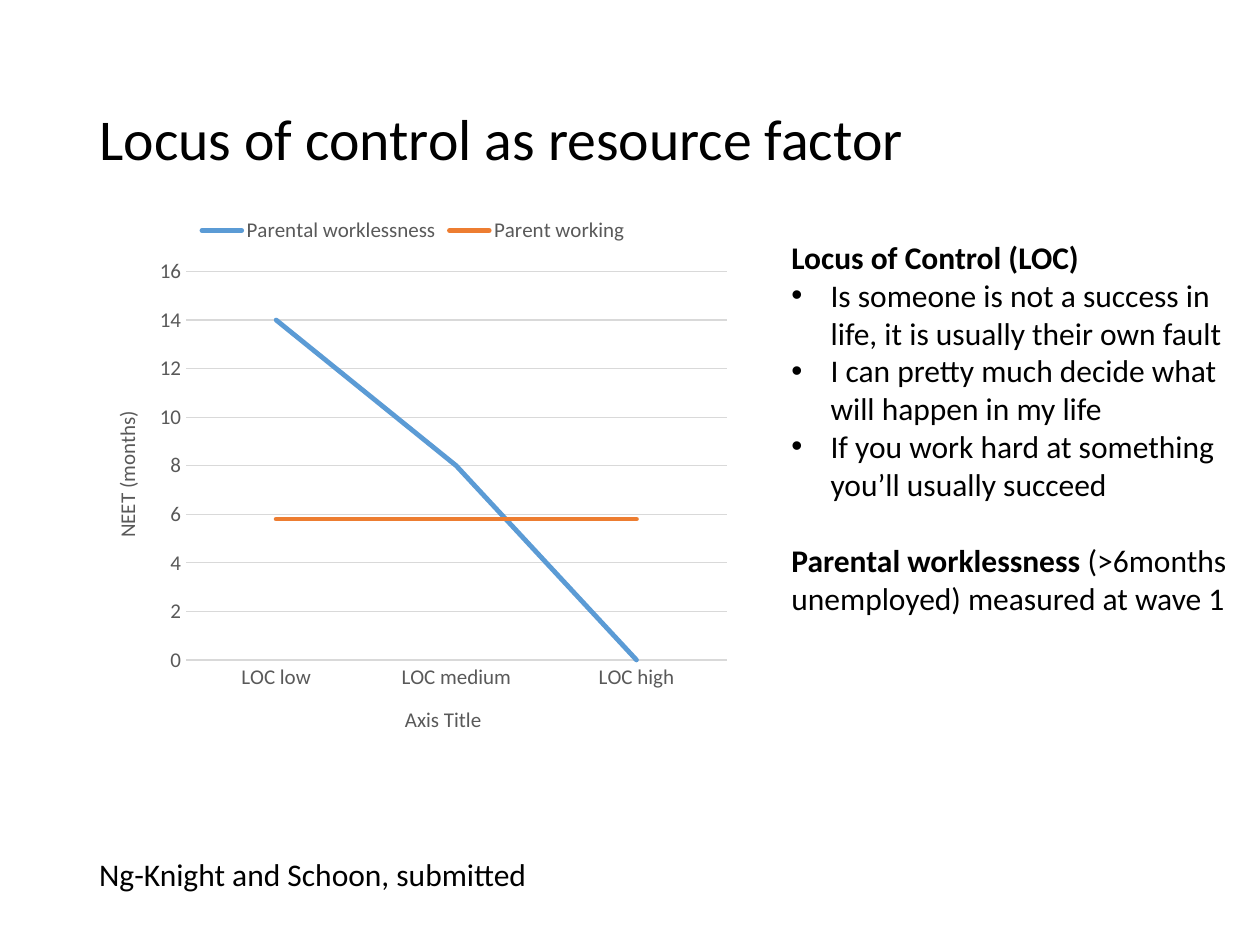
from pptx import Presentation
from pptx.chart.data import CategoryChartData as ChartData
from pptx.dml.color import RGBColor as RGB
from pptx.enum.chart import XL_CHART_TYPE as ChartType
from pptx.enum.chart import XL_LEGEND_POSITION as LegendPosition
from pptx.enum.chart import XL_TICK_MARK as TickMark
from pptx.enum.text import MSO_ANCHOR as Anchor
from pptx.enum.text import MSO_AUTO_SIZE as AutoSize
from pptx.enum.text import PP_ALIGN as Align
from pptx.oxml.ns import qn
from pptx.util import Cm, Pt

COLORS = {
    "text": "000000",
    "label": "595959",
    "grid": "D9D9D9",
    "workless": "5B9BD5",
    "working": "ED7D31",
}
TITLE_FONT = {"name": "Calibri", "size": Pt(33), "bold": False}
BODY_FONT = {"name": "Calibri", "size": Pt(18), "bold": False}
CHART_FONT = {"name": "Calibri", "size": Pt(12), "bold": False}

LEFT = 1.75
INDENT = Cm(0.79)
CATEGORIES = ["LOC low", "LOC medium", "LOC high"]
SERIES = [
    ("Parental worklessness", (14, 8, 0), "workless"),
    ("Parent working", (5.8, 5.8, 5.8), "working"),
]
STATEMENTS = [
    "Is someone is not a success in life, it is usually their own fault",
    "I can pretty much decide what will happen in my life",
    "If you work hard at something you’ll usually succeed",
]


def apply(target, values):
    for name, value in values.items():
        setattr(target, name, value)


def style_font(font, values, color="text"):
    apply(font, values)
    font.color.rgb = RGB.from_string(COLORS[color])


def style_line(line, color, width):
    line.color.rgb = RGB.from_string(COLORS[color])
    line.width = Pt(width)


def place(shape, left, top, width, height):
    apply(shape, {"left": Cm(left), "top": Cm(top),
                  "width": Cm(width), "height": Cm(height)})


def add_run(paragraph, text, font=BODY_FONT, bold=False):
    run = paragraph.add_run()
    run.text = text
    style_font(run.font, {**font, "bold": bold})


def set_bullet(paragraph, bulleted):
    properties = paragraph._p.get_or_add_pPr()
    indent = INDENT if bulleted else 0
    properties.set("marL", str(indent))
    properties.set("indent", str(-indent))
    if bulleted:
        font = properties.makeelement(qn("a:buFont"), {"typeface": "Arial"})
        mark = properties.makeelement(qn("a:buChar"), {"char": "•"})
        properties.extend([font, mark])
    else:
        properties.append(properties.makeelement(qn("a:buNone"), {}))


def fill_title(shape):
    place(shape, LEFT, 1.01, 21.9, 3.68)
    apply(shape.text_frame, {"vertical_anchor": Anchor.MIDDLE,
                             "word_wrap": True, "auto_size": AutoSize.NONE})
    paragraph = shape.text_frame.paragraphs[0]
    apply(paragraph, {"alignment": Align.LEFT, "line_spacing": 0.9})
    add_run(paragraph, "Locus of control as resource factor", TITLE_FONT)


def fill_notes(shape):
    place(shape, 15.7, 4.67, 10.01, 7.95)
    frame = shape.text_frame
    apply(frame, {"vertical_anchor": Anchor.TOP, "word_wrap": True,
                  "auto_size": AutoSize.NONE})
    # Each entry: bulleted, space before, runs as (text, bold)
    entries = [(False, 0, [("Locus of Control (LOC)", True)])]
    entries += [(True, 0, [(text, False)]) for text in STATEMENTS]
    entries.append((False, 22, [
        ("Parental worklessness ", True),
        ("(>6months unemployed) measured at wave 1", False),
    ]))
    for index, (bulleted, gap, runs) in enumerate(entries):
        paragraph = frame.add_paragraph() if index else frame.paragraphs[0]
        paragraph.space_before = Pt(gap)
        set_bullet(paragraph, bulleted)
        for text, bold in runs:
            add_run(paragraph, text, bold=bold)


def style_axis(axis, title):
    apply(axis, {"major_tick_mark": TickMark.NONE,
                 "minor_tick_mark": TickMark.NONE})
    style_font(axis.tick_labels.font, CHART_FONT, "label")
    frame = axis.axis_title.text_frame
    frame.text = title
    style_font(frame.paragraphs[0].runs[0].font, CHART_FONT, "label")


def add_line_chart(slide):
    data = ChartData()
    data.categories = CATEGORIES
    for name, values, _ in SERIES:
        data.add_series(name, values)
    chart = slide.shapes.add_chart(
        ChartType.LINE, Cm(LEFT), Cm(4.11), Cm(13.16), Cm(11.2), data).chart
    chart.has_title = False
    style_font(chart.font, CHART_FONT, "label")

    # Legend
    chart.has_legend = True
    apply(chart.legend, {"position": LegendPosition.TOP,
                         "include_in_layout": False})
    style_font(chart.legend.font, CHART_FONT, "label")

    # Axes
    style_axis(chart.category_axis, "Axis Title")
    style_line(chart.category_axis.format.line, "grid", 1)
    value_axis = chart.value_axis
    style_axis(value_axis, "NEET (months)")
    apply(value_axis, {"minimum_scale": 0, "maximum_scale": 16,
                       "major_unit": 2, "has_major_gridlines": True})
    value_axis.format.line.fill.background()
    style_line(value_axis.major_gridlines.format.line, "grid", 0.75)

    # Series with rounded line ends
    plot = chart.plots[0]
    plot.vary_by_categories = False
    for series, (_, _, color) in zip(plot.series, SERIES):
        series.smooth = False
        style_line(series.format.line, color, 2.75)
        for line in series._element.iter(qn("a:ln")):
            line.set("cap", "rnd")


def add_citation(slide):
    box = slide.shapes.add_textbox(Cm(LEFT), Cm(17.12), Cm(16.36), Cm(1.02))
    box.text_frame.word_wrap = True
    add_run(box.text_frame.paragraphs[0], "Ng-Knight and Schoon, submitted")


def main():
    presentation = Presentation()
    apply(presentation, {"slide_width": Cm(25.4), "slide_height": Cm(19.05)})
    slide = presentation.slides.add_slide(presentation.slide_layouts[1])
    fill_title(slide.shapes.title)
    add_line_chart(slide)
    fill_notes(slide.placeholders[1])
    add_citation(slide)
    presentation.save("out.pptx")


if __name__ == "__main__":
    main()
